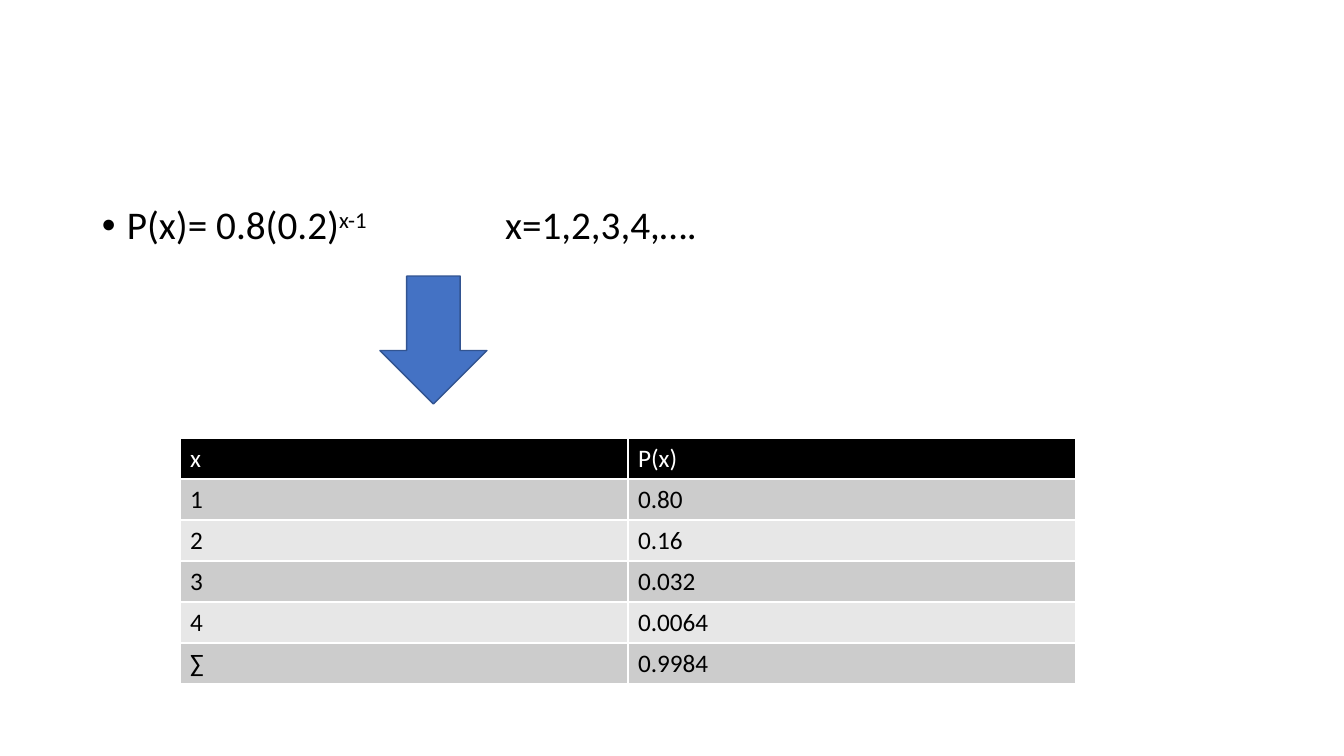
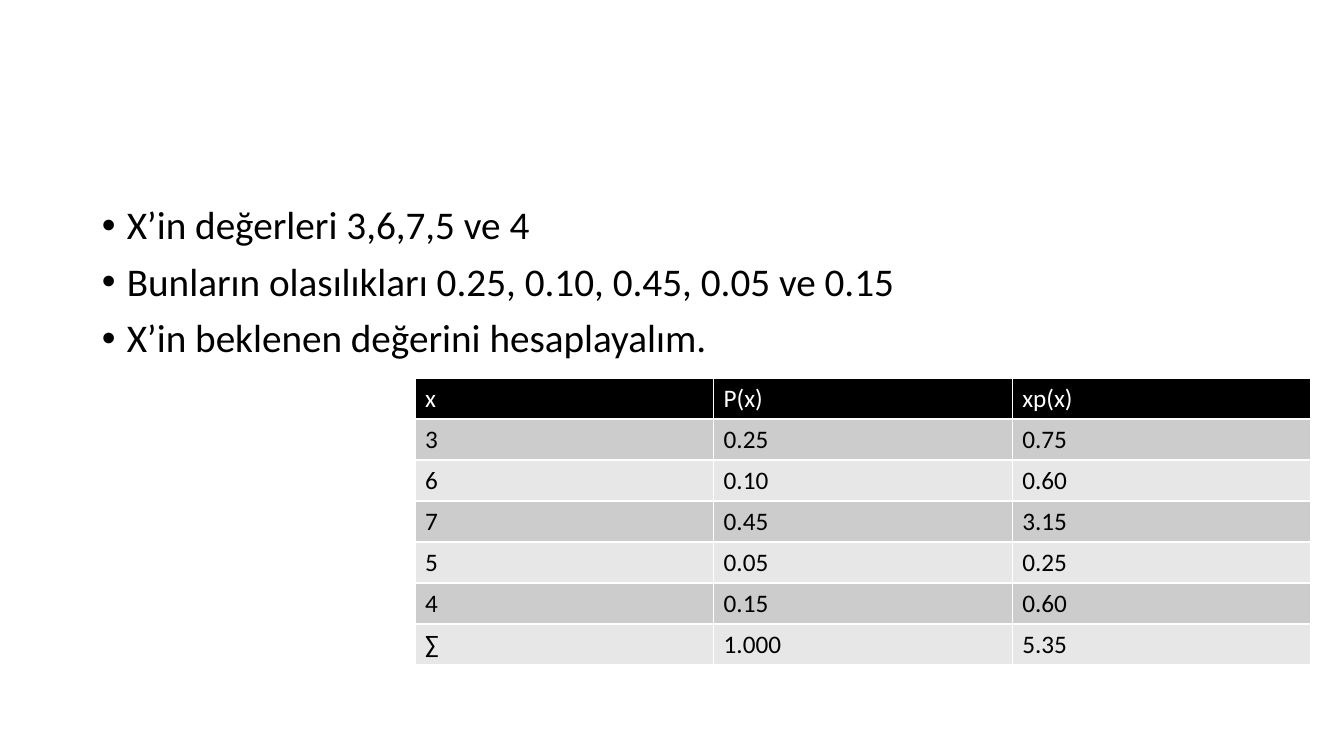
from dataclasses import dataclass

from lxml import etree
from pptx import Presentation
from pptx.dml.color import RGBColor
from pptx.enum.shapes import MSO_SHAPE
from pptx.oxml.ns import qn
from pptx.util import Emu, Pt

DOWN_ARROW = MSO_SHAPE.DOWN_ARROW
EMU_PER_INCH = 914400
PX_PER_INCH = 100.8


@dataclass(frozen=True)
class Theme:
    font: str = "Calibri"
    body_size: int = 28
    table_size: int = 18
    text: str = "000000"
    header_fill: str = "000000"
    header_text: str = "FFFFFF"
    band_fills: tuple = ("CCCCCC", "E7E7E7")
    border: str = "FFFFFF"
    arrow_fill: str = "4472C4"
    arrow_line: str = "325491"


THEME = Theme()
PAGE_SIZE = (1344, 756)
BODY_BOX = (92, 201, 1159, 480)
BULLET_INDENT = 25
TABLE_WIDTH = 896
ROW_HEIGHT = 41


def px(length):
    return Emu(round(length * EMU_PER_INCH / PX_PER_INCH))


def rgb(value):
    return RGBColor.from_string(value)


def style_font(para, size, color):
    para.font.name = THEME.font
    para.font.size = Pt(size)
    para.font.bold = False
    para.font.color.rgb = rgb(color)


def add_bullet(para):
    properties = para._p.get_or_add_pPr()
    properties.set("marL", str(px(BULLET_INDENT)))
    properties.set("indent", str(-px(BULLET_INDENT)))
    properties.set("defTabSz", str(EMU_PER_INCH))
    etree.SubElement(properties, qn("a:buFont"), typeface="Arial")
    etree.SubElement(properties, qn("a:buChar"), char="•")


def add_body(page, box, bullets):
    frame = page.shapes.add_textbox(*map(px, box)).text_frame
    frame.word_wrap = True
    for index, spans in enumerate(bullets):
        para = frame.add_paragraph() if index else frame.paragraphs[0]
        add_bullet(para)
        para.line_spacing = 0.9
        para.space_before = Pt(10)
        style_font(para, THEME.body_size, THEME.text)
        for text, baseline in spans:
            span = para.add_run()
            span.text = text
            if baseline:
                span._r.get_or_add_rPr().set("baseline", str(baseline * 1000))


def add_arrow(page, box):
    arrow = page.shapes.add_shape(DOWN_ARROW, *map(px, box))
    arrow.shadow.inherit = False
    arrow.fill.solid()
    arrow.fill.fore_color.rgb = rgb(THEME.arrow_fill)
    arrow.line.color.rgb = rgb(THEME.arrow_line)
    arrow.line.width = Pt(1)


def add_borders(cell):
    properties = cell._tc.get_or_add_tcPr()
    for index, side in enumerate(("lnL", "lnR", "lnT", "lnB")):
        line = etree.Element(qn(f"a:{side}"), w=str(Pt(1)))
        fill = etree.SubElement(line, qn("a:solidFill"))
        etree.SubElement(fill, qn("a:srgbClr"), val=THEME.border)
        properties.insert(index, line)


def style_cell(cell, text, fill, color):
    cell.text = text
    cell.fill.solid()
    cell.fill.fore_color.rgb = rgb(fill)
    add_borders(cell)
    style_font(cell.text_frame.paragraphs[0], THEME.table_size, color)


def add_probability_table(page, left, top, rows):
    box = (left, top, TABLE_WIDTH, ROW_HEIGHT * len(rows))
    table = page.shapes.add_table(len(rows), len(rows[0]), *map(px, box)).table
    table.horz_banding = False
    for row_index, values in enumerate(rows):
        if row_index == 0:
            fill, color = THEME.header_fill, THEME.header_text
        else:
            fill, color = THEME.band_fills[(row_index - 1) % 2], THEME.text
        for column_index, text in enumerate(values):
            style_cell(table.cell(row_index, column_index), text, fill, color)


def add_page(deck):
    return deck.slides.add_slide(deck.slide_layouts[6])


def build_distribution_page(deck):
    page = add_page(deck)
    formula = [("P(x)= 0.8(0.2)", 0), ("x-1\t\t", 30), ("x=1,2,3,4,….", 0)]
    add_body(page, BODY_BOX, [formula])
    add_arrow(page, (380, 276, 107, 128))
    add_probability_table(page, 180, 438, [
        ("x", "P(x)"),
        ("1", "0.80"),
        ("2", "0.16"),
        ("3", "0.032"),
        ("4", "0.0064"),
        ("∑", "0.9984"),
    ])


def build_expected_value_page(deck):
    page = add_page(deck)
    add_body(page, BODY_BOX, [
        [("X’in değerleri 3,6,7,5 ve 4", 0)],
        [("Bunların olasılıkları 0.25, 0.10, 0.45, 0.05 ve 0.15", 0)],
        [("X’in beklenen değerini hesaplayalım.", 0)],
    ])
    add_probability_table(page, 415, 378, [
        ("x", "P(x)", "xp(x)"),
        ("3", "0.25", "0.75"),
        ("6", "0.10", "0.60"),
        ("7", "0.45", "3.15"),
        ("5", "0.05", "0.25"),
        ("4", "0.15", "0.60"),
        ("∑", "1.000", "5.35"),
    ])


def main():
    deck = Presentation()
    deck.slide_width, deck.slide_height = map(px, PAGE_SIZE)
    build_distribution_page(deck)
    build_expected_value_page(deck)
    deck.save("out.pptx")


if __name__ == "__main__":
    main()
